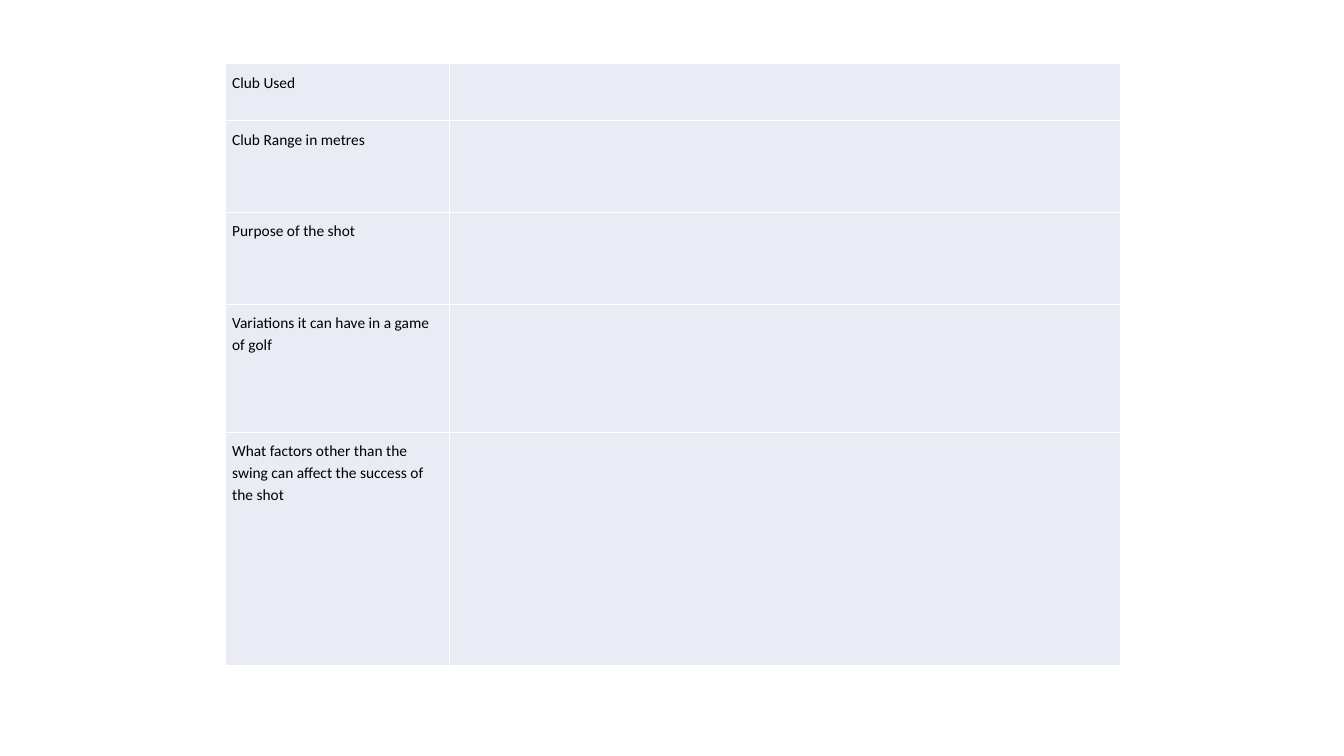
import lxml.etree
import pptx
import pptx.dml.color
import pptx.oxml.ns
import pptx.util

Pt = pptx.util.Pt
LABELS = [
    ("Club Used", 40.6),
    ("Club Range in metres", 65.7),
    ("Purpose of the shot", 65.7),
    ("Variations it can have in a game of golf", 91.4),
    ("What factors other than the swing can affect the success of the shot", 166.9),
]
COLUMN_WIDTHS = [160, 480]


def rgb(value):
    return pptx.dml.color.RGBColor.from_string(value)


def add_borders(cell, color, width):
    qn = pptx.oxml.ns.qn
    props = cell._tc.get_or_add_tcPr()
    for i, side in enumerate(("a:lnL", "a:lnR", "a:lnT", "a:lnB")):
        line = lxml.etree.Element(qn(side), w=str(Pt(width)))
        fill = lxml.etree.SubElement(line, qn("a:solidFill"))
        lxml.etree.SubElement(fill, qn("a:srgbClr"), val=color)
        props.insert(i, line)


def style_cell(cell, text=""):
    cell.fill.solid()
    cell.fill.fore_color.rgb = rgb("E9EBF5")
    cell.margin_left = cell.margin_right = Pt(5)
    cell.margin_top = cell.margin_bottom = Pt(5)
    add_borders(cell, "FFFFFF", 1)
    p = cell.text_frame.paragraphs[0]
    p.text = text
    p.line_spacing = 1.15
    p.font.name = "Calibri"
    p.font.size = Pt(11)
    p.font.color.rgb = rgb("000000")


def add_worksheet(s, left, top):
    width, height = sum(COLUMN_WIDTHS), sum(h for _, h in LABELS)
    table = s.shapes.add_table(
        len(LABELS), len(COLUMN_WIDTHS), Pt(left), Pt(top), Pt(width), Pt(height)
    ).table
    table.first_row = table.horz_banding = False
    for column, column_width in zip(table.columns, COLUMN_WIDTHS):
        column.width = Pt(column_width)
    for row, (label, row_height) in zip(table.rows, LABELS):
        row.height = Pt(row_height)
        style_cell(row.cells[0], label)
        style_cell(row.cells[1])


def main():
    prs = pptx.Presentation()
    prs.slide_width, prs.slide_height = Pt(960), Pt(540)
    s = prs.slides.add_slide(prs.slide_layouts[6])
    add_worksheet(s, 160.8, 45.4)
    prs.save("out.pptx")


if __name__ == "__main__":
    main()
